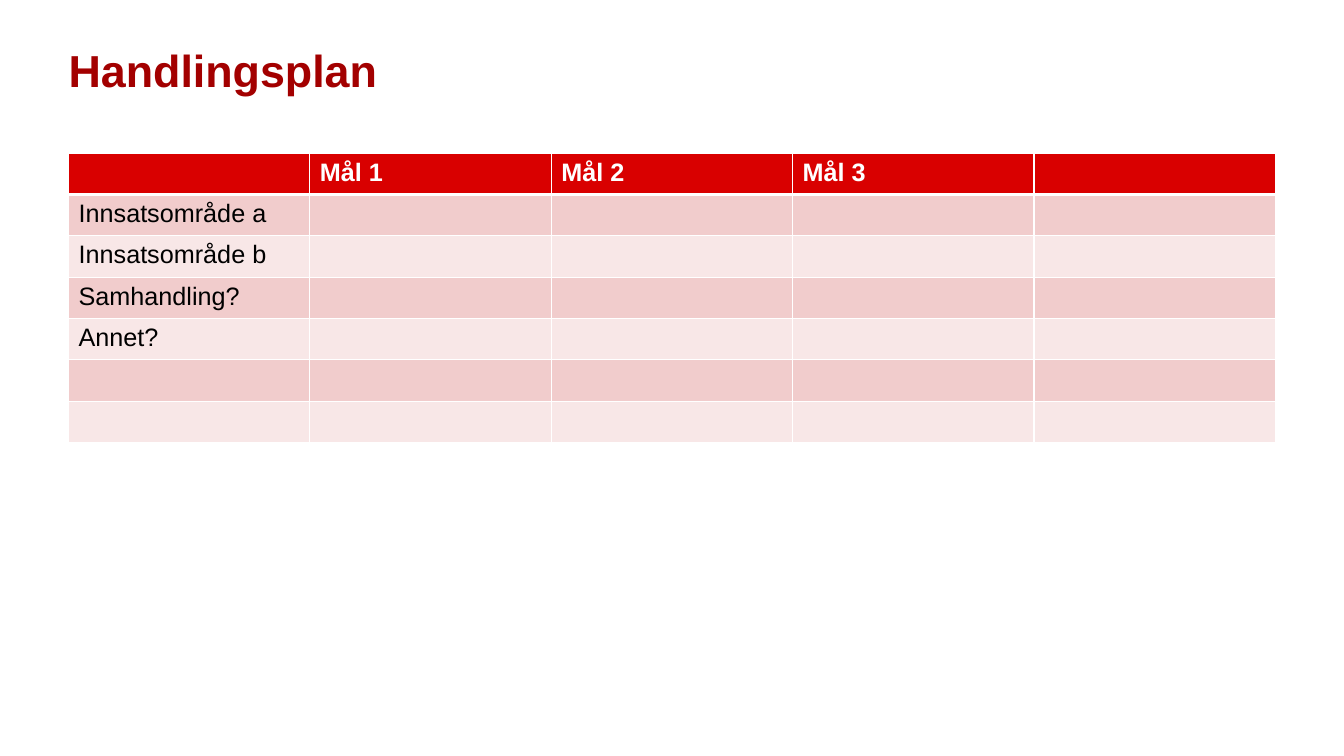
from dataclasses import dataclass

from lxml import etree
from pptx import Presentation
from pptx.dml.color import RGBColor
from pptx.enum.text import MSO_ANCHOR
from pptx.oxml.ns import qn
from pptx.slide import Slide
from pptx.table import _Cell
from pptx.text.text import _Paragraph
from pptx.util import Inches, Pt

MIDDLE = MSO_ANCHOR.MIDDLE
WHITE = "FFFFFF"
LEFT, WIDTH = 0.68, 11.97
ROW_HEIGHT = 0.41


@dataclass(frozen=True)
class Band:
    fill: str
    ink: str
    bold: bool
    top: int
    base: int


@dataclass(frozen=True)
class Row:
    texts: tuple[str, ...]
    band: Band


HEAD = Band("D90000", WHITE, True, 1, 3)
FIRST = Band("F1CCCC", "000000", False, 3, 1)
DARK = Band("F1CCCC", "000000", False, 1, 1)
LIGHT = Band("F8E7E7", "000000", False, 1, 1)

ROWS = (
    Row(("", "Mål 1", "Mål 2", "Mål 3", ""), HEAD),
    Row(("Innsatsområde a",), FIRST),
    Row(("Innsatsområde b",), LIGHT),
    Row(("Samhandling?",), DARK),
    Row(("Annet?",), LIGHT),
    Row((), DARK),
    Row((), LIGHT),
)


def color(code: str) -> RGBColor:
    return RGBColor.from_string(code)


def style(para: _Paragraph, size: int, ink: str, bold: bool) -> None:
    form = {"name": "Arial", "size": Pt(size), "bold": bold}
    for key, value in form.items():
        setattr(para.font, key, value)
    para.font.color.rgb = color(ink)


def edge(cell: _Cell, side: str, width: int) -> None:
    props = cell._tc.get_or_add_tcPr()
    line = etree.SubElement(props, qn(f"a:ln{side}"), w=str(Pt(width)))
    fill = etree.SubElement(line, qn("a:solidFill"))
    etree.SubElement(fill, qn("a:srgbClr"), val=WHITE)


def add_title(slide: Slide, text: str) -> None:
    box = slide.shapes.add_textbox(
        Inches(LEFT), Inches(0.25), Inches(WIDTH), Inches(0.94)
    )
    frame = box.text_frame
    form = {"word_wrap": True, "vertical_anchor": MIDDLE}
    form |= {f"margin_{side}": 0 for side in ("left", "top", "right", "bottom")}
    for key, value in form.items():
        setattr(frame, key, value)
    para = frame.paragraphs[0]
    para.text = text
    para.line_spacing = 0.9
    style(para, 32, "A30000", True)


def fill_cell(cell: _Cell, text: str, band: Band) -> None:
    sides = {"L": 1, "R": 1, "T": band.top, "B": band.base}
    for side, width in sides.items():
        edge(cell, side, width)
    cell.fill.solid()
    cell.fill.fore_color.rgb = color(band.fill)
    para = cell.text_frame.paragraphs[0]
    if text:
        para.text = text
    style(para, 18, band.ink, band.bold)


def add_plan(slide: Slide, rows: tuple[Row, ...]) -> None:
    count = len(rows[0].texts)
    table = slide.shapes.add_table(
        len(rows), count, Inches(LEFT), Inches(1.52),
        Inches(WIDTH), Inches(ROW_HEIGHT * len(rows)),
    ).table
    for line, row in zip(table.rows, rows):
        line.height = Inches(ROW_HEIGHT)
        texts = row.texts + ("",) * (count - len(row.texts))
        for cell, text in zip(line.cells, texts):
            fill_cell(cell, text, row.band)


def main() -> None:
    deck = Presentation()
    deck.slide_width, deck.slide_height = Inches(13.33), Inches(7.5)
    slide = deck.slides.add_slide(deck.slide_layouts[6])
    add_title(slide, "Handlingsplan")
    add_plan(slide, ROWS)
    deck.save("out.pptx")


if __name__ == "__main__":
    main()
